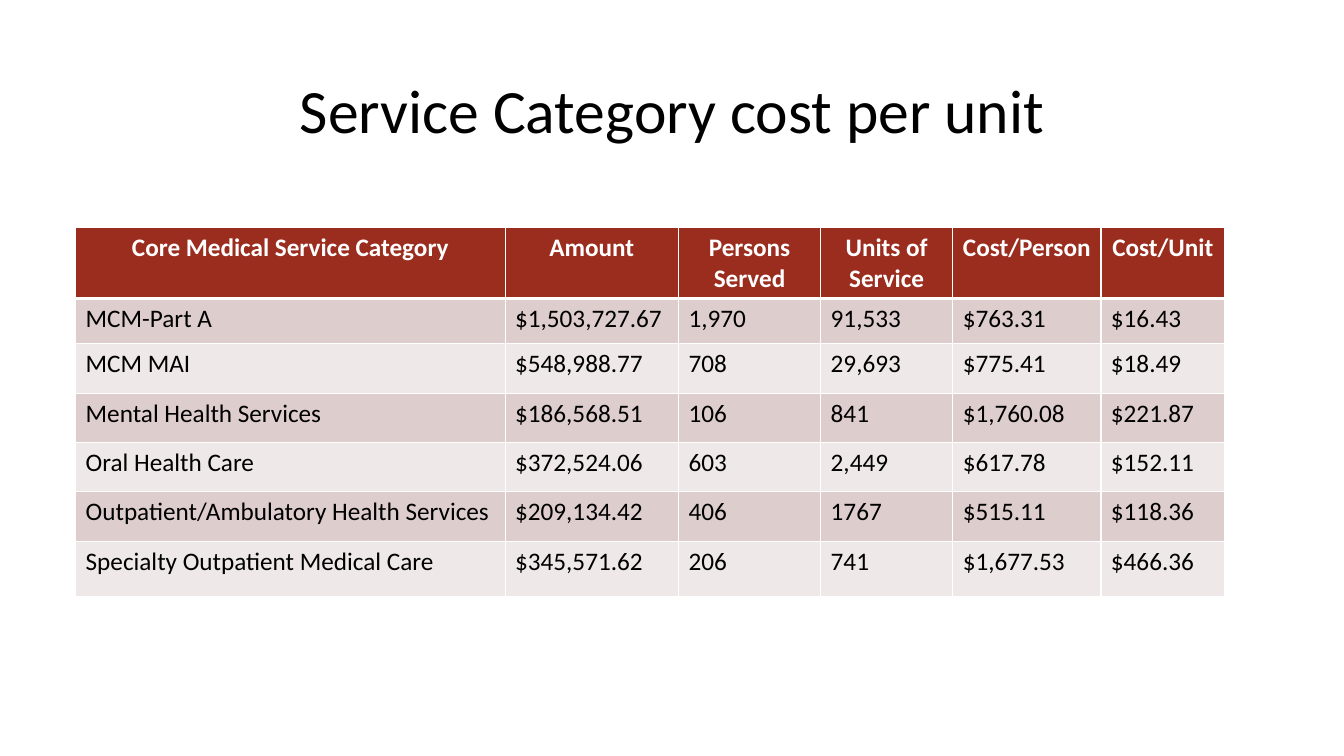
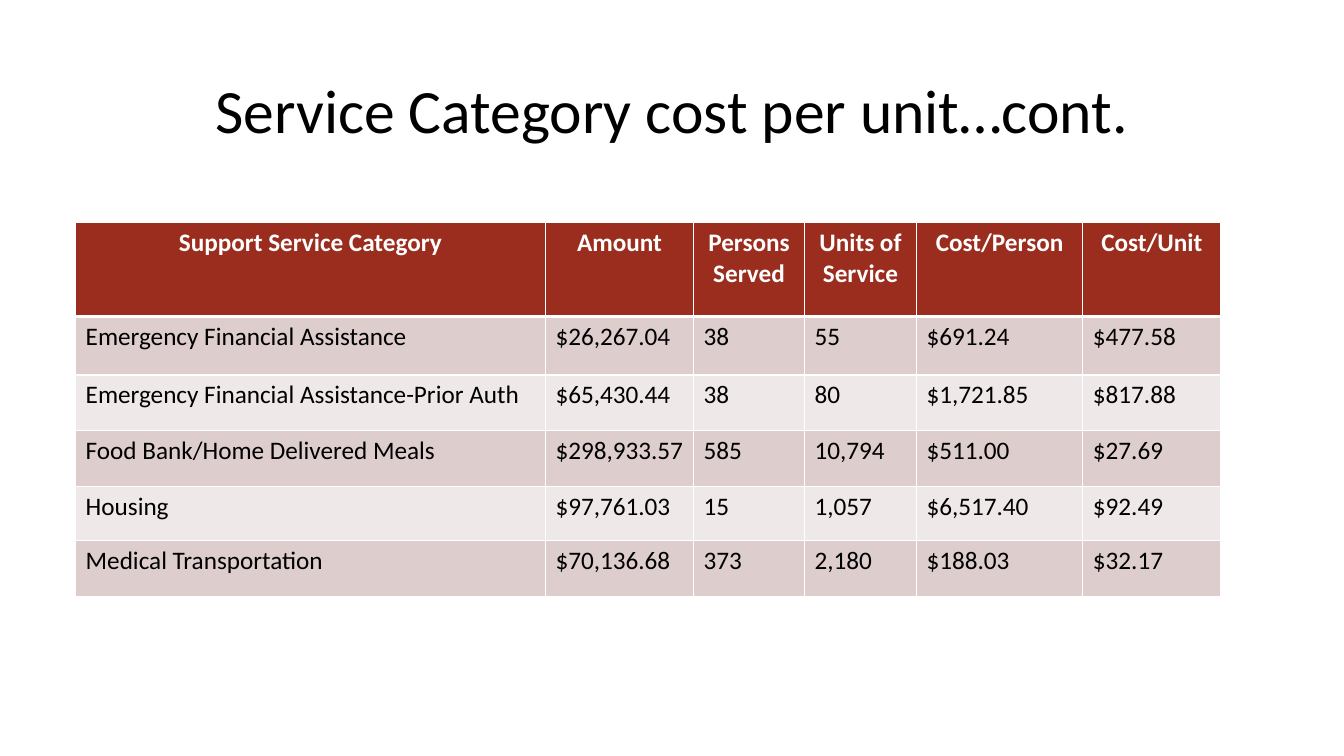
from lxml.etree import SubElement
from pptx import Presentation
from pptx.dml.color import RGBColor
from pptx.enum.text import MSO_ANCHOR as ANCHOR, PP_ALIGN as ALIGN
from pptx.oxml.ns import qn
from pptx.util import Inches, Pt

FONT = "Calibri"
BLACK, WHITE, HEADER = "000000", "FFFFFF", "9B2D1F"
BANDS = ("DECDCD", "EFE8E8")
TITLE_BOX = (0.92, 0.4, 11.5, 1.45)
TABLE_LEFT = 0.75
THIN, THICK = 1, 3
MEASURES = ["Amount", "Persons Served", "Units of Service", "Cost/Person", "Cost/Unit"]

TABLES = [
    {
        "title": "Service Category cost per unit",
        "top": 2.26,
        "widths": [4.26, 1.72, 1.41, 1.31, 1.47, 1.23],
        "heights": [0.66, 0.45, 0.49, 0.49, 0.49, 0.49, 0.55],
        "rows": [
            ["Core Medical Service Category", *MEASURES],
            ["MCM-Part A", "$1,503,727.67", "1,970", "91,533", "$763.31", "$16.43"],
            ["MCM MAI", "$548,988.77", "708", "29,693", "$775.41", "$18.49"],
            ["Mental Health Services", "$186,568.51", "106", "841", "$1,760.08", "$221.87"],
            ["Oral Health Care", "$372,524.06", "603", "2,449", "$617.78", "$152.11"],
            ["Outpatient/Ambulatory Health Services", "$209,134.42", "406", "1767",
             "$515.11", "$118.36"],
            ["Specialty Outpatient Medical Care", "$345,571.62", "206", "741",
             "$1,677.53", "$466.36"],
        ],
    },
    {
        "title": "Service Category cost per unit…cont.",
        "top": 2.21,
        "widths": [4.66, 1.47, 1.1, 1.11, 1.65, 1.37],
        "heights": [0.93, 0.58, 0.55, 0.56, 0.53, 0.56],
        "rows": [
            ["Support Service Category", *MEASURES],
            ["Emergency Financial Assistance", "$26,267.04", "38", "55", "$691.24", "$477.58"],
            ["Emergency Financial Assistance-Prior Auth", "$65,430.44", "38", "80",
             "$1,721.85", "$817.88"],
            ["Food Bank/Home Delivered Meals", "$298,933.57", "585", "10,794",
             "$511.00", "$27.69"],
            ["Housing", "$97,761.03", "15", "1,057", "$6,517.40", "$92.49"],
            ["Medical Transportation", "$70,136.68", "373", "2,180", "$188.03", "$32.17"],
        ],
    },
]


def color(hex_code):
    return RGBColor.from_string(hex_code)


def write(tf, text, size, hex_code, align, bold=False):
    p = tf.paragraphs[0]
    p.alignment = align
    r = p.add_run()
    r.text = text
    for name, value in {"name": FONT, "size": Pt(size), "bold": bold}.items():
        setattr(r.font, name, value)
    r.font.color.rgb = color(hex_code)
    return p


def add_title(s, text):
    tf = s.shapes.add_textbox(*map(Inches, TITLE_BOX)).text_frame
    tf.word_wrap = True
    tf.vertical_anchor = ANCHOR.MIDDLE
    write(tf, text, 44, BLACK, ALIGN.CENTER).line_spacing = 0.9


def set_borders(cell, top, bottom):
    """Draw white cell edges; the schema wants them ahead of the fill."""
    tc_pr = cell._tc.get_or_add_tcPr()
    edges = {"lnL": THIN, "lnR": THIN, "lnT": top, "lnB": bottom}
    for i, (tag, width) in enumerate(edges.items()):
        ln = SubElement(tc_pr, qn(f"a:{tag}"), w=str(Pt(width)))
        SubElement(SubElement(ln, qn("a:solidFill")), qn("a:srgbClr"), val=WHITE)
        tc_pr.insert(i, ln)


def format_cell(cell, text, row):
    is_header = row == 0
    cell.fill.solid()
    cell.fill.fore_color.rgb = color(HEADER if is_header else BANDS[(row - 1) % 2])
    set_borders(cell, THICK if row == 1 else THIN, THICK if is_header else THIN)
    write(cell.text_frame, text, 18, WHITE if is_header else BLACK,
          ALIGN.CENTER if is_header else ALIGN.LEFT, is_header)


def add_cost_table(s, top, widths, heights, rows):
    box = map(Inches, (TABLE_LEFT, top, sum(widths), sum(heights)))
    table = s.shapes.add_table(len(rows), len(widths), *box).table
    for column, width in zip(table.columns, widths):
        column.width = Inches(width)
    for i, (height, texts) in enumerate(zip(heights, rows)):
        table.rows[i].height = Inches(height)
        for j, text in enumerate(texts):
            format_cell(table.cell(i, j), text, i)


def main():
    prs = Presentation()
    prs.slide_width, prs.slide_height = Inches(13.33), Inches(7.5)
    for content in TABLES:
        s = prs.slides.add_slide(prs.slide_layouts[6])
        add_title(s, content["title"])
        add_cost_table(s, content["top"], content["widths"], content["heights"],
                       content["rows"])
    prs.save("out.pptx")


if __name__ == "__main__":
    main()
